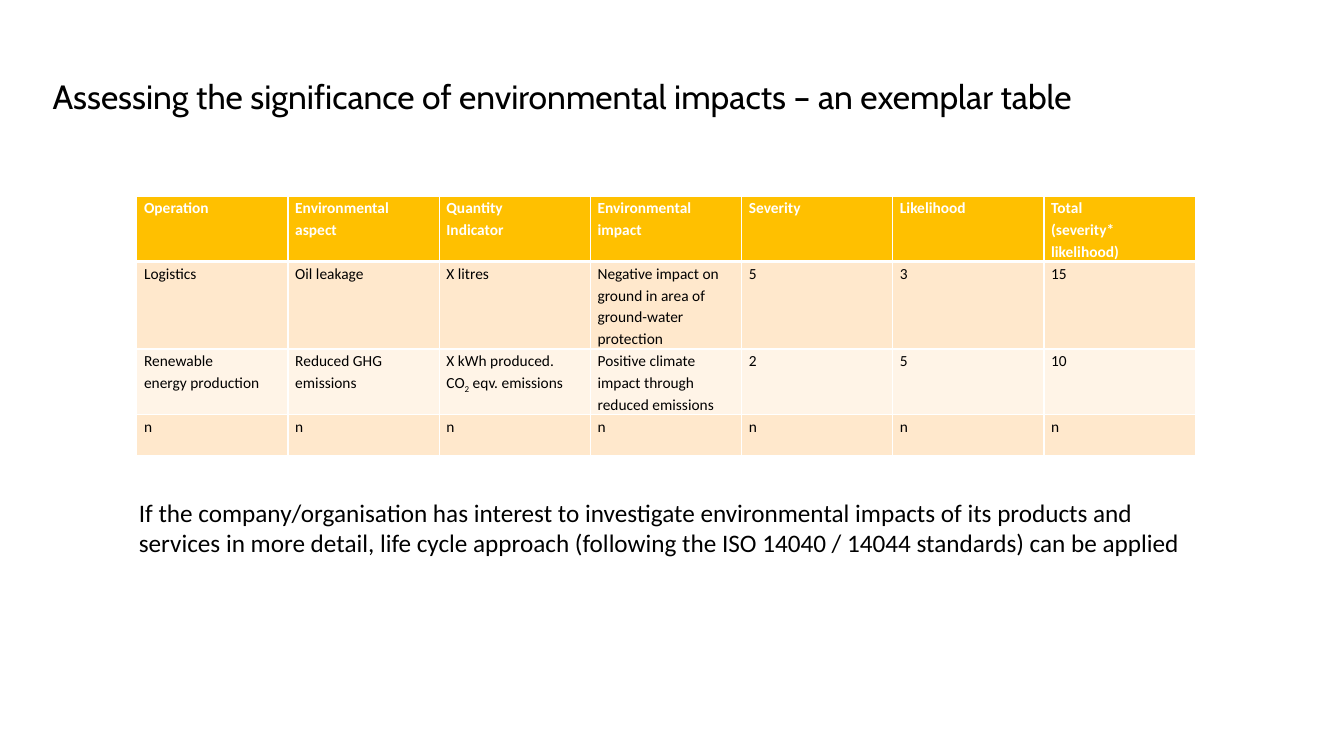
from dataclasses import dataclass

from lxml import etree
from pptx import Presentation
from pptx.dml.color import RGBColor
from pptx.enum.text import MSO_ANCHOR, MSO_AUTO_SIZE, PP_ALIGN
from pptx.oxml.ns import qn
from pptx.util import Cm, Pt

MIDDLE = MSO_ANCHOR.MIDDLE
TOP = MSO_ANCHOR.TOP
LEFT = PP_ALIGN.LEFT
FIT_SHAPE = MSO_AUTO_SIZE.SHAPE_TO_FIT_TEXT
TITLE_ONLY = 5


@dataclass(frozen=True)
class Theme:
    title_font: str = "Cabin"
    body_font: str = "Calibri"
    title_size: int = 24
    note_size: int = 18
    table_size: int = 11
    ink: str = "000000"
    white: str = "FFFFFF"
    header: str = "FFC000"
    bands: tuple = ("FFE8CC", "FFF4E7")
    rule: int = 1
    header_rule: int = 3


THEME = Theme()

TITLE = "Assessing the significance of environmental impacts – an exemplar table"
NOTE = (
    "If the company/organisation has interest to investigate environmental impacts "
    "of its products and services in more detail, life cycle approach "
    "(following the ISO 14040 / 14044 standards) can be applied"
)
ROWS = [
    ["Operation", "Environmental aspect", "Quantity\nIndicator", "Environmental impact",
     "Severity", "Likelihood", "Total\n(severity*\nlikelihood)"],
    ["Logistics", "Oil leakage", "X litres",
     "Negative impact on ground in area of ground-water protection", "5", "3", "15"],
    ["Renewable\nenergy production", "Reduced GHG emissions",
     "X kWh produced.\nCO_2_ eqv. emissions",
     "Positive climate impact through reduced emissions", "2", "5", "10"],
    ["n"] * 7,
]


def add_run(paragraph, text, font_name, size, color, bold=False):
    run = paragraph.add_run()
    run.text = text
    run.font.name = font_name
    run.font.size = Pt(size)
    run.font.bold = bold
    run.font.color.rgb = RGBColor.from_string(color)
    return run


def place(shape, box):
    shape.left, shape.top, shape.width, shape.height = map(Cm, box)


def add_title(slide, box):
    title = slide.shapes.title
    place(title, box)
    frame = title.text_frame
    frame.vertical_anchor = MIDDLE
    frame.word_wrap = True
    paragraph = frame.paragraphs[0]
    paragraph.alignment = LEFT
    paragraph.line_spacing = 0.9
    add_run(paragraph, TITLE, THEME.title_font, THEME.title_size, THEME.ink)


def set_borders(cell, row_index):
    top = THEME.header_rule if row_index == 1 else THEME.rule
    bottom = THEME.header_rule if row_index == 0 else THEME.rule
    widths = {"a:lnL": THEME.rule, "a:lnR": THEME.rule, "a:lnT": top, "a:lnB": bottom}
    properties = cell._tc.get_or_add_tcPr()
    for position, (tag, width) in enumerate(widths.items()):
        line = etree.Element(qn(tag), w=str(Pt(width)))
        fill = etree.SubElement(line, qn("a:solidFill"))
        etree.SubElement(fill, qn("a:srgbClr"), val=THEME.white)
        properties.insert(position, line)


def fill_cell(cell, text, row_index):
    is_header = row_index == 0
    background = THEME.header if is_header else THEME.bands[(row_index - 1) % 2]
    color = THEME.white if is_header else THEME.ink
    cell.fill.solid()
    cell.fill.fore_color.rgb = RGBColor.from_string(background)
    set_borders(cell, row_index)
    cell.margin_left = cell.margin_right = Cm(0.18)
    cell.margin_top = cell.margin_bottom = 0
    cell.vertical_anchor = TOP
    frame = cell.text_frame
    for line_index, line in enumerate(text.split("\n")):
        paragraph = frame.add_paragraph() if line_index else frame.paragraphs[0]
        paragraph.alignment = LEFT
        paragraph.line_spacing = 1.15
        for part_index, part in enumerate(line.split("_")):
            run = add_run(paragraph, part, THEME.body_font, THEME.table_size, color, is_header)
            if part_index % 2:
                run._r.get_or_add_rPr().set("baseline", "-25000")


def add_impact_table(slide, box):
    left, top, width, height = map(Cm, box)
    shape = slide.shapes.add_table(len(ROWS), len(ROWS[0]), left, top, width, height)
    table = shape.table
    for column in table.columns:
        column.width = width // len(ROWS[0])
    for row in table.rows:
        row.height = Cm(1.04)
    shape.height = height
    for row_index, texts in enumerate(ROWS):
        for column_index, text in enumerate(texts):
            fill_cell(table.cell(row_index, column_index), text, row_index)


def add_note(slide, box):
    shape = slide.shapes.add_textbox(*map(Cm, box))
    frame = shape.text_frame
    frame.word_wrap = True
    frame.auto_size = FIT_SHAPE
    add_run(frame.paragraphs[0], NOTE, THEME.body_font, THEME.note_size, THEME.ink)


def main():
    presentation = Presentation()
    presentation.slide_width = Cm(33.87)
    presentation.slide_height = Cm(19.05)
    slide = presentation.slides.add_slide(presentation.slide_layouts[TITLE_ONLY])
    add_title(slide, (1.07, 1.09, 30.48, 2.77))
    add_impact_table(slide, (3.45, 4.94, 26.67, 6.3))
    add_note(slide, (3.25, 12.4, 27.03, 1.8))
    presentation.save("out.pptx")


if __name__ == "__main__":
    main()
